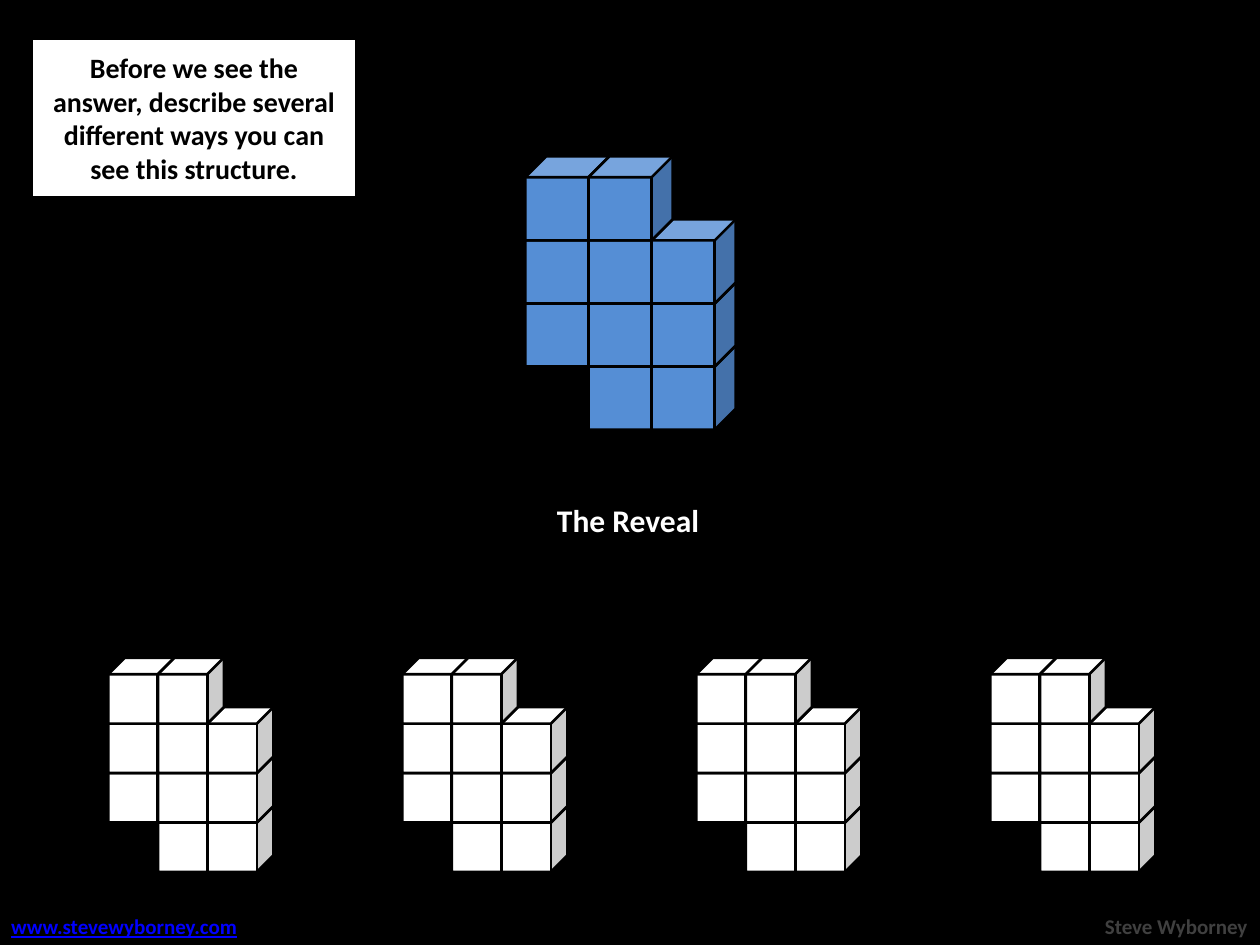
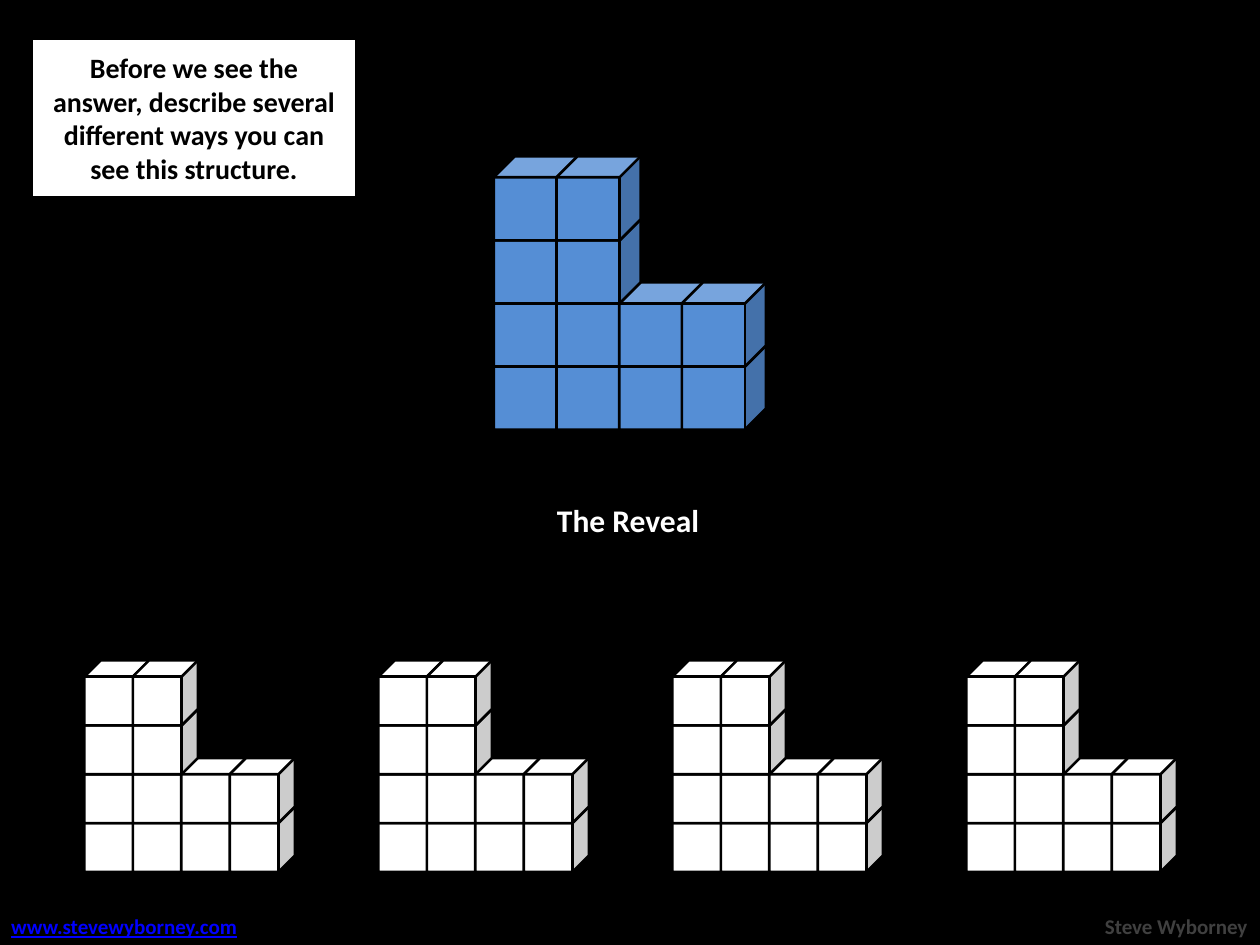
import pptx
import pptx.util
import pptx.dml.color
import pptx.enum.shapes
import pptx.enum.text

RGBColor = pptx.dml.color.RGBColor
ALIGN = pptx.enum.text.PP_ALIGN
ANCHOR = pptx.enum.text.MSO_ANCHOR
SHAPE = pptx.enum.shapes.MSO_SHAPE

BLACK = RGBColor(0x00, 0x00, 0x00)
WHITE = RGBColor(0xFF, 0xFF, 0xFF)
BLUE = RGBColor(0x55, 0x8E, 0xD5)
LINK = RGBColor(0x00, 0x00, 0xFF)
GREY = RGBColor(0x40, 0x40, 0x40)

FONT = "Calibri"
WIDTH, HEIGHT = pptx.util.Inches(10), pptx.util.Inches(7.5)
COLUMNS, ROWS = 100, 75
CUBE_FACE = 0.75
COPIES = 4
COPY_STEP = 70 / 3

PROMPT_BOX = (2.5, 3, 25.8, 12.7)
TITLE_BOX = (38.8, 39.2, 22.1, 4.2)
LINK_BOX = (-0.1, 72, 20.5, 3)
AUTHOR_BOX = (79.5, 72, 20.5, 3)

STRUCTURES = [
    {
        "layers": ["##.", "###", "###", ".##"],
        "large": (41.7, 12.4, 16.7, 21.7),
        "small": (8.6, 52.2, 13.1, 17),
    },
    {
        "layers": ["##..", "##..", "####", "####"],
        "large": (39.2, 12.4, 21.6, 21.7),
        "small": (6.7, 52.4, 16.7, 16.8),
    },
]


def place(box):
    left, top, width, height = box
    return (
        round(left * WIDTH / COLUMNS),
        round(top * HEIGHT / ROWS),
        round(width * WIDTH / COLUMNS),
        round(height * HEIGHT / ROWS),
    )


def paint(sp, fill, line_width):
    sp.fill.solid()
    sp.fill.fore_color.rgb = fill
    sp.line.color.rgb = BLACK
    sp.line.width = pptx.util.Pt(line_width)


def write(sp, text, size, color, align, underline=False):
    tf = sp.text_frame
    tf.word_wrap = True
    tf.auto_size = pptx.enum.text.MSO_AUTO_SIZE.NONE
    p = tf.paragraphs[0]
    p.text = text
    p.alignment = align
    font = p.font
    font.name = FONT
    font.size = pptx.util.Pt(size)
    font.bold = True
    font.underline = underline
    font.color.rgb = color


def add_title(s, box):
    sp = s.shapes.title
    sp.left, sp.top, sp.width, sp.height = place(box)
    paint(sp, BLACK, 2)
    write(sp, "The Reveal", 18, WHITE, ALIGN.CENTER)
    sp.text_frame.vertical_anchor = ANCHOR.MIDDLE


def add_prompt(s, box):
    sp = s.shapes.add_shape(SHAPE.RECTANGLE, *place(box))
    sp.shadow.inherit = False
    paint(sp, WHITE, 2)
    text = "Before we see the answer, describe several different ways you can see this structure."
    write(sp, text, 16, BLACK, ALIGN.CENTER)
    sp.text_frame.vertical_anchor = ANCHOR.MIDDLE


def add_footer(s):
    author = s.shapes.add_textbox(*place(AUTHOR_BOX))
    write(author, "Steve Wyborney", 12, GREY, ALIGN.RIGHT)
    link = s.shapes.add_textbox(*place(LINK_BOX))
    write(link, "www.stevewyborney.com", 12, LINK, ALIGN.LEFT, underline=True)


def add_structure(s, box, layers, color):
    left, top, width, height = box
    cube = height / (1 + CUBE_FACE * (len(layers) - 1))
    across = (width - cube) / (len(layers[0]) - 1)
    down = (height - cube) / (len(layers) - 1)
    group = s.shapes.add_group_shape()
    for row, layer in reversed(list(enumerate(layers))):
        for column, mark in enumerate(layer):
            if mark == "#":
                cell = (left + column * across, top + row * down, cube, cube)
                sp = group.shapes.add_shape(SHAPE.CUBE, *place(cell))
                sp.shadow.inherit = False
                paint(sp, color, 1.5)


def add_reveal_slide(prs, layers, large, small):
    s = prs.slides.add_slide(prs.slide_layouts.get_by_name("Title Only"))
    s.background.fill.solid()
    s.background.fill.fore_color.rgb = BLACK
    add_title(s, TITLE_BOX)
    add_footer(s)
    add_prompt(s, PROMPT_BOX)
    add_structure(s, large, layers, BLUE)
    left, *rest = small
    for copy_index in range(COPIES):
        add_structure(s, (left + copy_index * COPY_STEP, *rest), layers, WHITE)


def main():
    prs = pptx.Presentation()
    prs.slide_width, prs.slide_height = WIDTH, HEIGHT
    for structure in STRUCTURES:
        add_reveal_slide(prs, **structure)
    prs.save("out.pptx")


if __name__ == "__main__":
    main()
